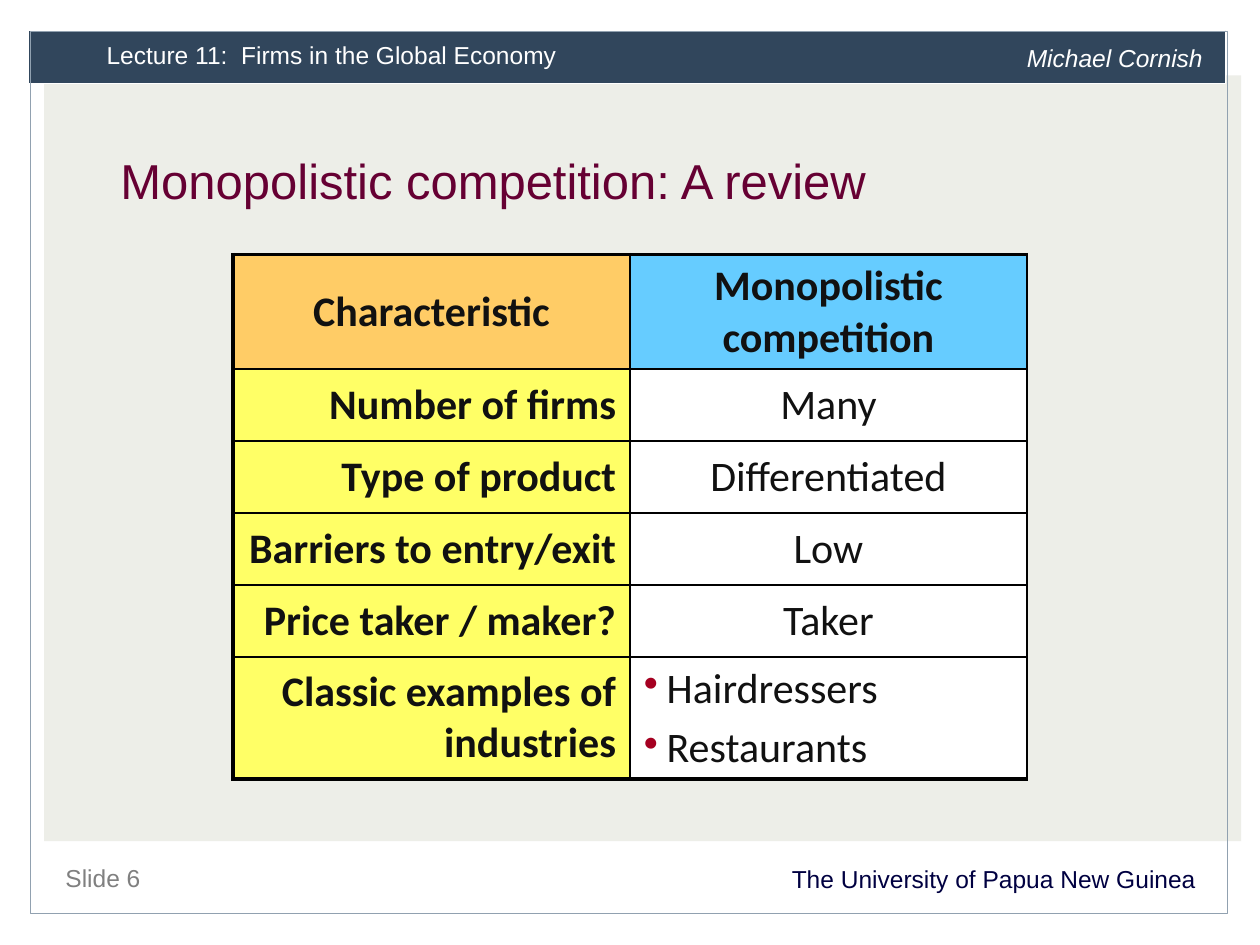
from lxml import etree
from pptx import Presentation
from pptx.dml.color import RGBColor
from pptx.enum.shapes import MSO_SHAPE
from pptx.enum.text import MSO_ANCHOR, PP_ALIGN
from pptx.oxml.ns import qn
from pptx.util import Cm, Pt

RECTANGLE = MSO_SHAPE.RECTANGLE
MIDDLE = MSO_ANCHOR.MIDDLE
LEFT, CENTER, RIGHT = PP_ALIGN.LEFT, PP_ALIGN.CENTER, PP_ALIGN.RIGHT
COLORS = {
    "panel": "EDEEE8", "band": "31465C", "frame": "91A1B0", "white": "FFFFFF",
    "navy": "000041", "gray": "808080", "title": "660033", "text": "111111",
    "orange": "FFCC66", "blue": "66CCFF", "yellow": "FFFF66",
    "border": "000000", "bullet": "A50021",
}
ROWS = [
    ("Characteristic", ["Monopolistic competition"]),
    ("Number of firms", ["Many"]),
    ("Type of product", ["Differentiated"]),
    ("Barriers to entry/exit", ["Low"]),
    ("Price taker / maker?", ["Taker"]),
    ("Classic examples of industries", ["Hairdressers", "Restaurants"]),
]
HEADER_HEIGHT, ROW_HEIGHT, LAST_HEIGHT = 2.31, 1.45, 2.43
THIN, THICK = 1, 2.25


def rgb(name):
    """Return the named colour."""
    return RGBColor.from_string(COLORS[name])


def write(paragraph, text, size=14, color="text", font="Arial", bold=False,
          italic=False, align=LEFT, line=None, before=None):
    """Fill a paragraph with formatted text."""
    run = paragraph.add_run()
    run.text = text
    run.font.size, run.font.name = Pt(size), font
    run.font.bold, run.font.italic = bold, italic
    run.font.color.rgb = rgb(color)
    paragraph.alignment = align
    if line:
        paragraph.line_spacing = Pt(line)
    if before:
        paragraph.space_before = Pt(before)


def add_label(slide, box, text, **style):
    """Add a wrapped text box with one paragraph."""
    frame = slide.shapes.add_textbox(*map(Cm, box)).text_frame
    frame.word_wrap = True
    write(frame.paragraphs[0], text, **style)


def add_rectangle(slide, box, fill=None, line=None, width=0.5):
    """Add a plain rectangle without shadow."""
    shape = slide.shapes.add_shape(RECTANGLE, *map(Cm, box))
    shape.shadow.inherit = False
    if fill:
        shape.fill.solid()
        shape.fill.fore_color.rgb = rgb(fill)
    else:
        shape.fill.background()
    if line:
        shape.line.color.rgb = rgb(line)
        shape.line.width = Pt(width)
    else:
        shape.line.fill.background()


def set_borders(cell, **widths):
    """Draw the cell's sides, each with its width in points."""
    properties = cell._tc.get_or_add_tcPr()
    for index, side in enumerate(("left", "right", "top", "bottom")):
        line = etree.Element(qn("a:ln" + side[0].upper()), w=str(Pt(widths[side])))
        fill = etree.SubElement(line, qn("a:solidFill"))
        etree.SubElement(fill, qn("a:srgbClr"), val=COLORS["border"])
        properties.insert(index, line)


def set_bullet(paragraph, indent):
    """Give a paragraph a coloured bullet and a hanging indent."""
    properties = paragraph._p.get_or_add_pPr()
    properties.set("marL", str(Cm(indent)))
    properties.set("indent", str(-Cm(indent)))
    color = etree.SubElement(properties, qn("a:buClr"))
    etree.SubElement(color, qn("a:srgbClr"), val=COLORS["bullet"])
    etree.SubElement(properties, qn("a:buChar"), char="•")


def fill_cell(cell, lines, fill, align, bold):
    """Write a cell's lines, with bullets when there are several."""
    cell.fill.solid()
    cell.fill.fore_color.rgb = rgb(fill)
    cell.vertical_anchor = MIDDLE
    cell.margin_left = cell.margin_right = Cm(0.28)
    cell.margin_top = cell.margin_bottom = Cm(0.13)
    frame = cell.text_frame
    for index, text in enumerate(lines):
        paragraph = frame.add_paragraph() if index else frame.paragraphs[0]
        if len(lines) > 1:
            set_bullet(paragraph, 0.46)
        write(paragraph, text, size=24, font="Calibri", bold=bold,
              align=align, before=4.8 if index else None)


def build_frame(slide, left, top, width, height):
    """Draw the panel, header band and outline of the page."""
    add_rectangle(slide, (left + 0.28, top + 0.88, width, 15.44), fill="panel")
    add_rectangle(slide, (left - 0.03, top - 0.03, width, 1.07), fill="band", line="white")
    add_rectangle(slide, (left, top, width, height), line="frame", width=0.75)


def build_header(slide, left, top, width):
    """Place the lecture name and the lecturer in the band."""
    add_label(slide, (left + 1.29, top, 15.57, 0.94),
              "Lecture 11:  Firms in the Global Economy", color="white", line=18)
    add_label(slide, (left + width - 4.29, top + 0.07, 4.17, 0.94),
              "Michael Cornish", color="white", italic=True, line=18)


def build_footer(slide, left, top, width):
    """Place the slide number and the university."""
    add_label(slide, (left, top, 11, 0.86), "Slide 6", color="gray", line=20)
    add_label(slide, (left, top + 0.2, width, 0.81),
              "The University of Papua New Guinea", color="navy", align=RIGHT, line=15)


def build_table(slide, left, top, width):
    """Build the table of market characteristics."""
    last = len(ROWS) - 1
    heights = [HEADER_HEIGHT] + [ROW_HEIGHT] * (last - 1) + [LAST_HEIGHT]
    table = slide.shapes.add_table(len(ROWS), 2, Cm(left), Cm(top),
                                   Cm(width), Cm(sum(heights))).table
    for column in table.columns:
        column.width = Cm(width / 2)
    for index, (label, values) in enumerate(ROWS):
        table.rows[index].height = Cm(heights[index])
        header = index == 0
        value_align = LEFT if len(values) > 1 else CENTER
        fill_cell(table.cell(index, 0), [label], "orange" if header else "yellow",
                  CENTER if header else RIGHT, True)
        fill_cell(table.cell(index, 1), values, "blue" if header else "white",
                  value_align, header)
        for side in range(2):
            set_borders(table.cell(index, side), left=THIN if side else THICK, right=THIN,
                        top=THICK if header else THIN,
                        bottom=THICK if index == last else THIN)


def main():
    """Build and save the slide."""
    presentation = Presentation()
    presentation.slide_width, presentation.slide_height = Cm(25.4), Cm(19.05)
    slide = presentation.slides.add_slide(presentation.slide_layouts[6])
    build_frame(slide, 0.61, 0.64, 24.13, 17.78)
    build_header(slide, 0.61, 0.64, 24.13)
    build_footer(slide, 1.07, 17.15, 23.29)
    add_label(slide, (2.18, 3.18, 20.65, 1.9), "Monopolistic competition: A review",
              size=28, color="title", line=26)
    build_table(slide, 4.7, 5.13, 16)
    presentation.save("out.pptx")


if __name__ == "__main__":
    main()
